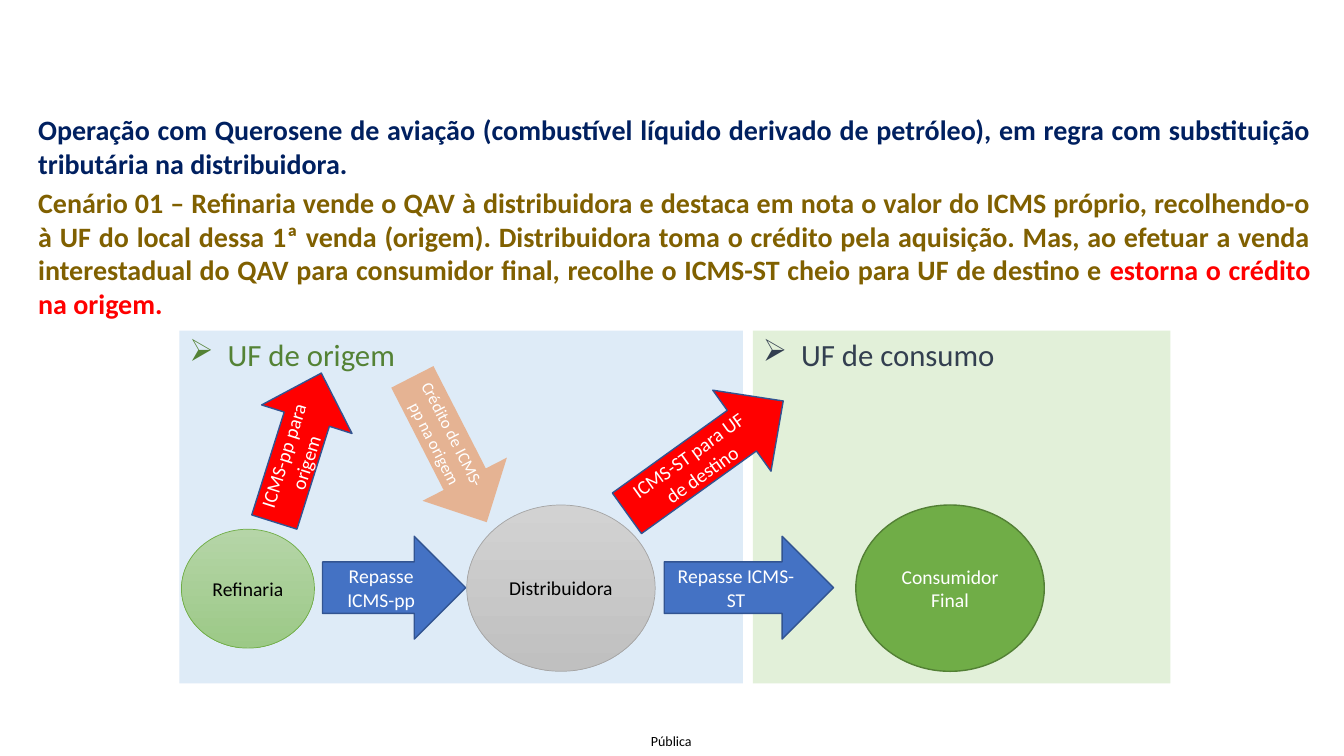
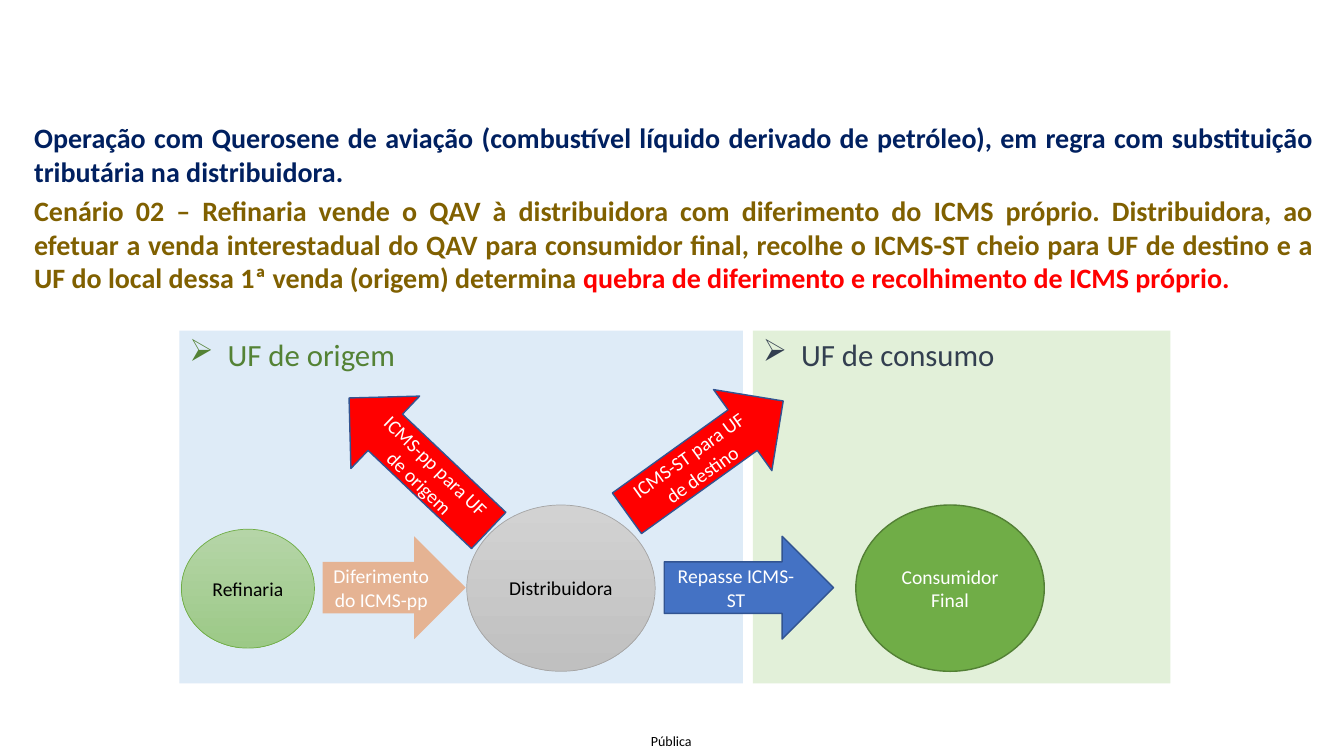
from lxml.etree import SubElement
from pptx import Presentation
from pptx.dml.color import RGBColor
from pptx.enum.shapes import MSO_SHAPE as Shape
from pptx.enum.text import MSO_ANCHOR as Anchor, PP_ALIGN as Align
from pptx.oxml.ns import qn
from pptx.util import Inches, Pt

COLORS = {
    "origin_panel": "DEEBF7", "origin_title": "548235",
    "target_panel": "E2F0D9", "target_title": "333F50",
    "transfer": "4472C4", "arrow_edge": "325491",
    "tax": "FF0000", "credit": "ED7D31",
    "refinery_top": "B5D5A7", "refinery_end": "9CC987", "refinery_edge": "70AD47",
    "distributor_top": "D2D2D2", "distributor_end": "C0C0C0", "distributor_edge": "A5A5A5",
    "consumer": "70AD47", "consumer_edge": "538035",
    "operation": "002060", "scenario": "806000",
    "white": "FFFFFF", "black": "000000",
}
COLUMNS, ROWS = 40, 30
OPERATION = ("Operação com Querosene de aviação (combustível líquido derivado de petróleo), "
             "em regra com substituição tributária na distribuidora.")
SCENARIOS = [
    ("Cenário 01 – Refinaria vende o QAV à distribuidora e destaca em nota o valor do ICMS próprio, "
     "recolhendo-o à UF do local dessa 1ª venda (origem). Distribuidora toma o crédito pela aquisição. "
     "Mas, ao efetuar a venda interestadual do QAV para consumidor final, recolhe o ICMS-ST cheio "
     "para UF de destino e ", "estorna o crédito na origem."),
    ("Cenário 02 – Refinaria vende o QAV à distribuidora com diferimento do ICMS próprio. Distribuidora, "
     "ao efetuar a venda interestadual do QAV para consumidor final, recolhe o ICMS-ST cheio para UF de "
     "destino e a UF do local dessa 1ª venda (origem) determina ",
     "quebra de diferimento e recolhimento de ICMS próprio."),
]


def rgb(name):
    """Return the named colour."""
    return RGBColor.from_string(COLORS[name])


def write(para, text, size=14, color="white", bold=False, align=Align.CENTER):
    """Add a formatted span to a paragraph."""
    para.alignment = align
    span = para.add_run()
    span.text = text
    span.font.name, span.font.size, span.font.bold = "Calibri", Pt(size), bold
    span.font.color.rgb = rgb(color)


class FlowDeck:
    """Deck of tax flow diagrams placed on a grid."""

    def __init__(self):
        """Start an empty widescreen deck."""
        self.deck = Presentation()
        self.deck.slide_width, self.deck.slide_height = Inches(13.33), Inches(7.5)
        self.column = self.deck.slide_width / COLUMNS
        self.row = self.deck.slide_height / ROWS

    def place(self, left, top, width, height):
        """Turn grid units into slide lengths."""
        return (round(left * self.column), round(top * self.row),
                round(width * self.column), round(height * self.row))

    def text_box(self, area, anchor=Anchor.TOP, turn=0):
        """Add a wrapping text box and return its frame."""
        box = self.page.shapes.add_textbox(*self.place(*area))
        box.rotation = turn
        box.text_frame.word_wrap = True
        box.text_frame.vertical_anchor = anchor
        return box.text_frame

    def shape(self, kind, area, fill, edge=None, weight=1, turn=0, alpha=None):
        """Add a preset shape with a solid or two-colour fill."""
        shape = self.page.shapes.add_shape(kind, *self.place(*area))
        shape.shadow.inherit = False
        shape.rotation = turn
        if isinstance(fill, tuple):
            shape.fill.gradient()
            shape.fill.gradient_angle = 270
            for stop, name in zip(shape.fill.gradient_stops, fill):
                stop.color.rgb = rgb(name)
            for stop, position in zip(shape.fill.gradient_stops, (0, 1)):
                stop.position = position
        else:
            shape.fill.solid()
            shape.fill.fore_color.rgb = rgb(fill)
        if alpha:
            color = shape.element.spPr.find(qn("a:solidFill"))[0]
            SubElement(color, qn("a:alpha"), val=str(alpha * 1000))
        if edge:
            shape.line.color.rgb, shape.line.width = rgb(edge), Pt(weight)
        else:
            shape.line.fill.background()
        shape.text_frame.word_wrap = True
        shape.text_frame.vertical_anchor = Anchor.MIDDLE
        return shape

    def panel(self, left, width, title, name):
        """Add a state panel with a bulleted title."""
        panel = self.shape(Shape.RECTANGLE, (left, 13.12, width, 14), f"{name}_panel")
        panel.text_frame.vertical_anchor = Anchor.TOP
        para = panel.text_frame.paragraphs[0]
        indent = round(1.14 * self.column)
        props = para._p.get_or_add_pPr()
        props.set("marL", str(indent))
        props.set("indent", str(-indent))
        SubElement(props, qn("a:buChar"), char="➢")
        write(para, title, size=22, color=f"{name}_title", align=Align.JUSTIFY)

    def party(self, area, text, fill, edge, weight=0.5, color="black"):
        """Add an ellipse for a party to the sale."""
        party = self.shape(Shape.OVAL, area, fill, edge, weight)
        write(party.text_frame.paragraphs[0], text, color=color)

    def arrow(self, area, text=None, fill="tax", turn=0, head=0.5, size=14):
        """Add a block arrow; credit arrows are translucent and unlined."""
        faded = fill == "credit"
        arrow = self.shape(Shape.RIGHT_ARROW, area, fill, None if faded else "arrow_edge",
                           turn=turn, alpha=50 if faded else None)
        arrow.adjustments[1] = head
        if text:
            write(arrow.text_frame.paragraphs[0], text, size=size)

    def caption(self, area, text, turn):
        """Add a turned caption."""
        write(self.text_box(area, turn=turn).paragraphs[0], text)

    def intro(self, area, scenario, outcome):
        """Add the operation and scenario paragraphs."""
        frame = self.text_box(area)
        style = {"size": 20, "bold": True, "align": Align.JUSTIFY}
        write(frame.paragraphs[0], OPERATION, color="operation", **style)
        para = frame.add_paragraph()
        para.space_before = Pt(4)
        write(para, scenario, color="scenario", **style)
        write(para, outcome, color="tax", **style)

    def footer(self):
        """Add the classification footer."""
        frame = self.text_box((18.93, 28.84, 2.1, 1.16), Anchor.MIDDLE)
        frame.margin_left = frame.margin_right = frame.margin_top = frame.margin_bottom = 0
        write(frame.paragraphs[0], "Pública", size=10, color="black")

    def scenario_page(self, intro_area, scenario, first_text, first_fill, head):
        """Start a page with the diagram shared by the scenarios."""
        self.page = self.deck.slides.add_slide(self.deck.slide_layouts[6])
        self.footer()
        self.panel(5.34, 16.77, "UF de origem", "origin")
        self.panel(22.41, 12.42, "UF de consumo", "target")
        self.arrow((9.6, 21.28, 4.26, 4.08), first_text, first_fill)
        self.arrow((19.77, 21.28, 5.04, 4.08), "Repasse ICMS-ST", "transfer")
        self.party((5.4, 21, 3.96, 4.72), "Refinaria",
                   ("refinery_top", "refinery_end"), "refinery_edge")
        self.party((13.89, 20.04, 5.61, 6.6), "Distribuidora",
                   ("distributor_top", "distributor_end"), "distributor_edge")
        self.party((25.47, 20.04, 5.61, 6.6), "Consumidor Final",
                   "consumer", "consumer_edge", 1, "white")
        self.intro(intro_area, *scenario)
        self.arrow((18.12, 16.16, 5.73, 3.96), "ICMS-ST para UF de destino", turn=324.3, head=head)


def main():
    """Build and save both scenarios."""
    flow = FlowDeck()
    flow.scenario_page((0.84, 4.28, 38.46, 3.76), SCENARIOS[0], "Repasse ICMS-pp", "transfer", 0.51)
    flow.arrow((6.54, 15.88, 4.65, 3.76), "ICMS-pp para origem", turn=287.5, head=0.51)
    flow.arrow((10.95, 15.96, 4.86, 3.76), "Crédito de ICMS-pp na origem", "credit",
               turn=62.9, head=0.51, size=12)

    flow.scenario_page((0.72, 4.6, 38.67, 3.76), SCENARIOS[1], "Diferimento do ICMS-pp", "credit", 0.5)
    flow.arrow((9.6, 16.44, 5.73, 3.96), turn=223.5)
    flow.caption((10.26, 17.68, 4.95, 2.28), "ICMS-pp para UF de origem", 44)
    flow.deck.save("out.pptx")


if __name__ == "__main__":
    main()
